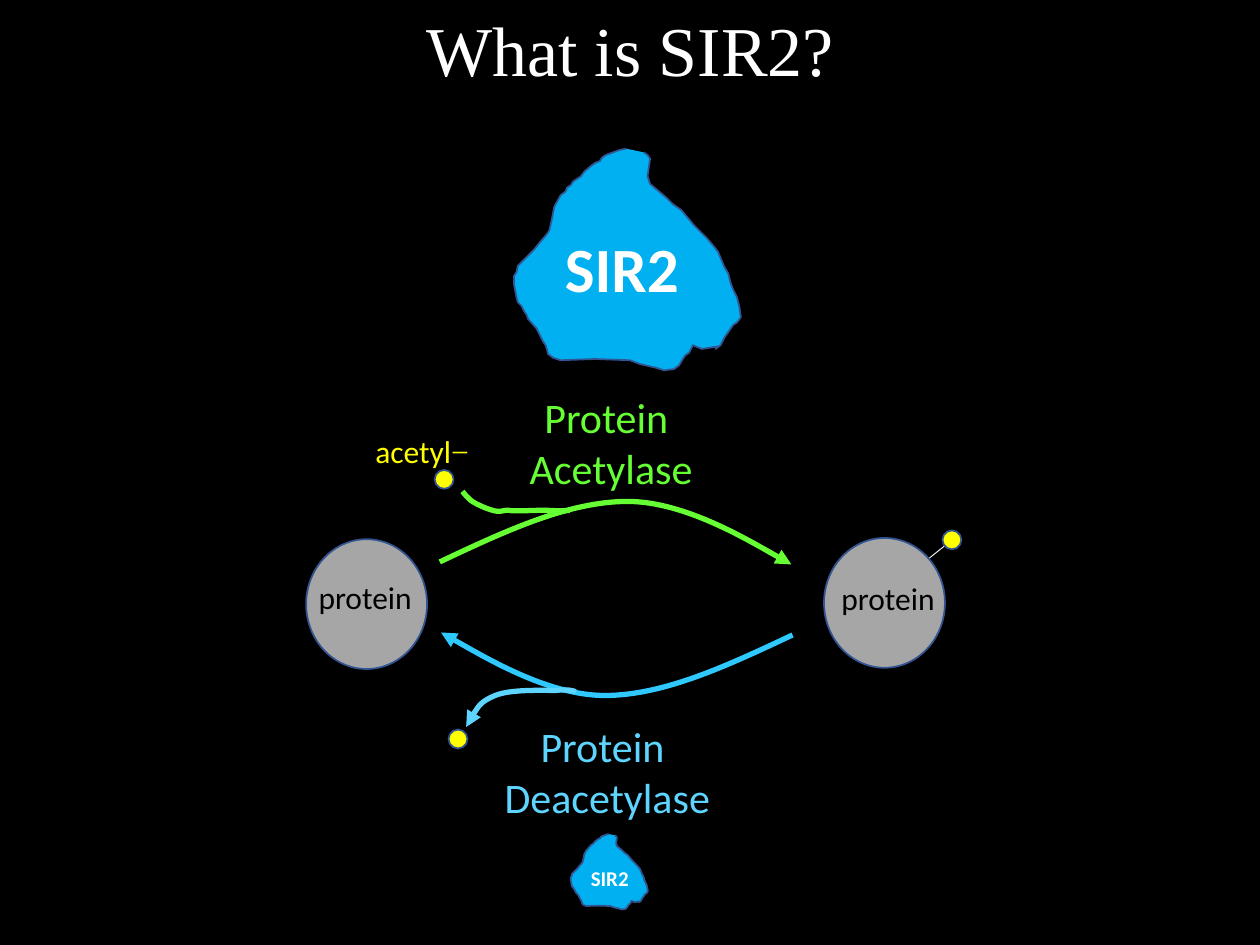
from dataclasses import dataclass
from typing import Optional

from lxml import etree
from pptx import Presentation
from pptx.dml.color import RGBColor
from pptx.enum.shapes import MSO_CONNECTOR, MSO_SHAPE
from pptx.enum.text import MSO_AUTO_SIZE, PP_ALIGN
from pptx.oxml.ns import qn
from pptx.util import Emu, Pt

STRAIGHT = MSO_CONNECTOR.STRAIGHT
OVAL = MSO_SHAPE.OVAL
CENTER, LEFT = PP_ALIGN.CENTER, PP_ALIGN.LEFT
FIT_TEXT = MSO_AUTO_SIZE.SHAPE_TO_FIT_TEXT

# The slide is a grid of 1000 columns by 750 rows
COLUMNS, ROWS = 1000, 750
CELL = 9144
SANS, SERIF = "Calibri", "Times New Roman"
COLORS = {
    "black": "000000", "white": "FFFFFF", "enzyme": "00B0F0",
    "outline": "325491", "protein": "A6A6A6", "acetyl": "FFFF00",
    "acetylase": "66FF33", "return": "2FC9FF", "deacetylase": "5DD5FF",
}


@dataclass
class Span:
    text: str
    size: int
    color: str
    font: str = SANS
    bold: bool = False


@dataclass
class Label:
    box: tuple[int, int, int, int]  # left, top, width, height
    lines: list[list[Span]]
    align: PP_ALIGN = CENTER


@dataclass
class Enzyme:
    left: int
    top: int
    scale: float
    label: Label


@dataclass
class Disc:
    box: tuple[int, int, int, int]
    color: str


@dataclass
class Curve:
    points: list[tuple[int, int]]  # start, then triples of Bezier points
    color: str
    arrow: bool = False


# Outline of the enzyme, relative to its top left corner
ENZYME_OUTLINE = [
    (89, 0), (84, 1), (73, 5), (70, 7), (68, 10), (65, 11), (62, 13), (56, 18),
    (53, 22), (47, 26), (45, 29), (42, 31), (41, 34), (37, 37), (32, 46), (30, 56),
    (28, 65), (26, 68), (20, 75), (16, 80), (12, 84), (9, 87), (3, 93), (2, 98),
    (0, 101), (0, 108), (2, 118), (3, 122), (6, 125), (8, 129), (10, 132), (11, 135),
    (18, 143), (23, 153), (25, 156), (26, 159), (27, 163), (31, 166), (37, 168),
    (64, 167), (92, 168), (100, 171), (113, 174), (119, 176), (127, 175), (131, 172),
    (134, 167), (136, 164), (139, 162), (142, 156), (149, 159), (162, 157), (160, 159),
    (164, 156), (167, 150), (174, 140), (177, 138), (180, 134), (179, 126), (177, 118),
    (174, 112), (172, 107), (170, 99), (167, 94), (162, 82), (159, 78), (153, 71),
    (150, 68), (143, 61), (133, 49), (126, 44), (121, 39), (108, 28), (106, 22),
    (107, 15), (108, 8), (106, 5), (103, 3),
]

ENZYMES = [
    Enzyme(408, 118, 1, Label((424, 177, 139, 71),
                              [[Span("SIR2", 36, "white", bold=True)]])),
    Enzyme(453, 662, 0.34, Label((456, 682, 56, 30),
                                 [[Span("SIR2", 12, "white", bold=True)]])),
]

DISCS = [
    Disc((243, 428, 96, 103), "protein"),
    Disc((654, 427, 96, 103), "protein"),
    Disc((345, 373, 15, 15), "acetyl"),
    Disc((356, 579, 15, 15), "acetyl"),
    Disc((748, 421, 15, 15), "acetyl"),
]

FORWARD = [(349, 446), (400, 422), (451, 398), (498, 398),
           (544, 398), (628, 448), (628, 448)]
# The way back is the forward arc turned half a circle
BACKWARD = [(978 - x, 950 - y) for x, y in FORWARD]
CURVES = [
    Curve(FORWARD, "acetylase", arrow=True),
    Curve(BACKWARD, "return", arrow=True),
    Curve([(367, 390), (372, 396), (373, 398), (385, 403),
           (398, 408), (397, 405), (403, 405), (409, 406), (422, 405), (432, 405),
           (437, 405), (447, 406), (452, 405)], "acetylase"),
    Curve([(457, 549), (454, 548), (451, 547), (441, 548),
           (430, 548), (405, 547), (393, 552),
           (381, 557), (375, 567), (370, 577)], "deacetylase", arrow=True),
]

LABELS = [
    Label((0, 0, COLUMNS, 77), [[Span("What is SIR2?", 40, "white", SERIF)]]),
    Label((308, 567, 348, 91), [[Span("Protein ", 24, "deacetylase")],
                                [Span("Deacetylase", 24, "deacetylase")]]),
    Label((311, 306, 348, 91), [[Span("Protein ", 24, "acetylase")],
                                [Span("Acetylase", 24, "acetylase")]]),
    Label((288, 338, 112, 40), [[Span("acetyl", 18, "acetyl"),
                                 Span("−", 18, "acetyl", SERIF)]], LEFT),
    Label((243, 454, 96, 40), [[Span("protein", 18, "black")]], LEFT),
    Label((658, 455, 96, 40), [[Span("protein", 18, "black")]], LEFT),
]


def rgb(name: str) -> RGBColor:
    return RGBColor.from_string(COLORS[name])


def cells(*counts: int) -> list[Emu]:
    return [Emu(count * CELL) for count in counts]


def style(shape, fill: Optional[str], line: str, width: float) -> None:
    shape.shadow.inherit = False
    if fill:
        shape.fill.solid()
        shape.fill.fore_color.rgb = rgb(fill)
    else:
        shape.fill.background()
    shape.line.color.rgb = rgb(line)
    shape.line.width = Pt(width)


def draw_label(shapes, label: Label) -> None:
    frame = shapes.add_textbox(*cells(*label.box)).text_frame
    frame.word_wrap = True
    frame.auto_size = FIT_TEXT
    para = frame.paragraphs[0]
    para.alignment = label.align
    for number, line in enumerate(label.lines):
        if number:
            para.add_line_break()
        for span in line:
            run = para.add_run()
            run.text = span.text
            run.font.name = span.font
            run.font.size = Pt(span.size)
            run.font.bold = span.bold
            run.font.color.rgb = rgb(span.color)


def draw_enzyme(page, enzyme: Enzyme) -> None:
    shapes = page.shapes.add_group_shape().shapes
    builder = shapes.build_freeform(*ENZYME_OUTLINE[0], scale=CELL * enzyme.scale)
    builder.add_line_segments(ENZYME_OUTLINE[1:], close=False)
    body = builder.convert_to_shape(*cells(enzyme.left, enzyme.top))
    style(body, "enzyme", "outline", 1)
    draw_label(shapes, enzyme.label)


def draw_disc(page, disc: Disc) -> None:
    style(page.shapes.add_shape(OVAL, *cells(*disc.box)), disc.color, "outline", 1)


def draw_curve(page, curve: Curve) -> None:
    builder = page.shapes.build_freeform(*curve.points[0], scale=CELL)
    builder.add_line_segments(curve.points[1:], close=False)
    shape = builder.convert_to_shape()
    style(shape, None, curve.color, 3)
    # Join each three straight segments into one Bezier segment
    outline = next(shape.element.iter(qn("a:path")))
    segments = outline.findall(qn("a:lnTo"))
    for first in range(0, len(segments), 3):
        bezier = etree.SubElement(outline, qn("a:cubicBezTo"))
        for segment in segments[first:first + 3]:
            bezier.append(segment[0])
            outline.remove(segment)
    if curve.arrow:
        line = next(shape.element.iter(qn("a:ln")))
        etree.SubElement(line, qn("a:tailEnd"), type="triangle")


def draw_bond(page) -> None:
    bond = page.shapes.add_connector(STRAIGHT, *cells(755, 429, 725, 453))
    bond.line.color.rgb = rgb("white")
    bond.line.width = Pt(0.5)
    etree.SubElement(bond.element.spPr, qn("a:effectLst"))


def main() -> None:
    deck = Presentation()
    deck.slide_width, deck.slide_height = cells(COLUMNS, ROWS)
    page = deck.slides.add_slide(deck.slide_layouts[6])
    page.background.fill.solid()
    page.background.fill.fore_color.rgb = rgb("black")

    # Bond first, so that the discs cover its ends
    draw_bond(page)
    for enzyme in ENZYMES:
        draw_enzyme(page, enzyme)
    for disc in DISCS:
        draw_disc(page, disc)
    for curve in CURVES:
        draw_curve(page, curve)
    for label in LABELS:
        draw_label(page.shapes, label)
    deck.save("out.pptx")


if __name__ == "__main__":
    main()
